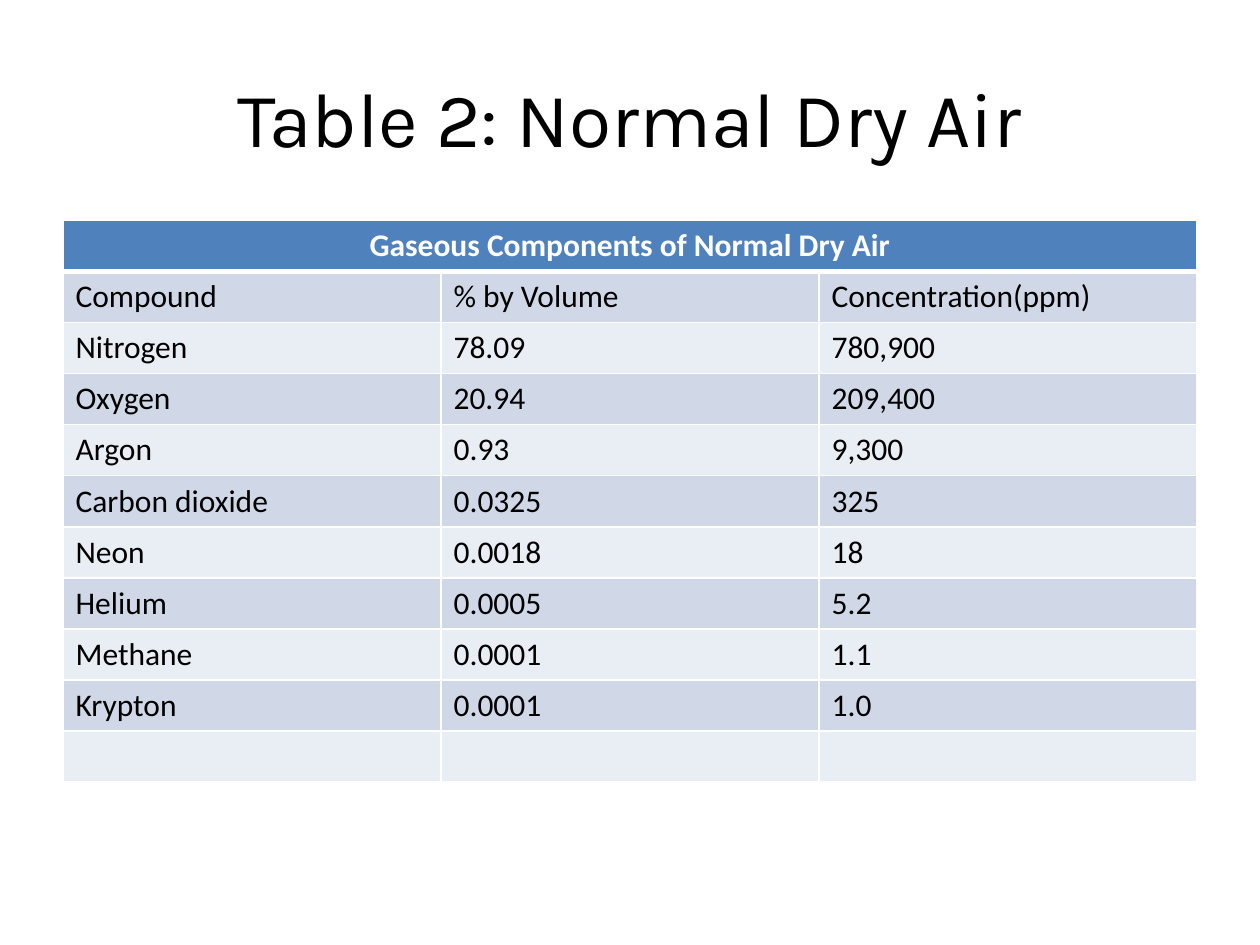
from dataclasses import dataclass

from lxml import etree
from pptx import Presentation
from pptx.dml.color import RGBColor
from pptx.enum.text import MSO_ANCHOR, PP_ALIGN
from pptx.oxml.ns import qn
from pptx.util import Inches, Pt

LEFT, CENTER = PP_ALIGN.LEFT, PP_ALIGN.CENTER
MIDDLE = MSO_ANCHOR.MIDDLE

HEADING = "Gaseous Components of Normal Dry Air"
GASES = [
    ("Compound", "% by Volume", "Concentration(ppm)"),
    ("Nitrogen", "78.09", "780,900"),
    ("Oxygen", "20.94", "209,400"),
    ("Argon", "0.93", "9,300"),
    ("Carbon dioxide", "0.0325", "325"),
    ("Neon", "0.0018", "18"),
    ("Helium", "0.0005", "5.2"),
    ("Methane", "0.0001", "1.1"),
    ("Krypton", "0.0001", "1.0"),
    ("", "", ""),
]


@dataclass(frozen=True)
class Theme:
    title_font: str = "Karla"
    body_font: str = "Calibri"
    title_size: int = 44
    body_size: int = 18
    ink: str = "000000"
    paper: str = "FFFFFF"
    header: str = "4F81BD"
    bands: tuple = ("D0D8E8", "E9EDF4")
    rule: int = 1
    header_rule: int = 3


def write(frame, text, *, font, size, color, bold=False, align=LEFT):
    para = frame.paragraphs[0]
    para.alignment = align
    para.font.size = Pt(size)
    if text:
        span = para.add_run()
        span.text = text
        span.font.name = font
        span.font.size = Pt(size)
        span.font.bold = bold
        span.font.color.rgb = RGBColor.from_string(color)


def set_borders(cell, color, **widths):
    """Draw solid cell borders; widths in points are keyed L, R, T, B."""
    properties = cell._tc.get_or_add_tcPr()
    for side, width in widths.items():
        line = etree.SubElement(properties, qn(f"a:ln{side}"), w=str(Pt(width)))
        fill = etree.SubElement(line, qn("a:solidFill"))
        etree.SubElement(fill, qn("a:srgbClr"), val=color)


class SlideBuilder:
    def __init__(self, page, theme):
        self.page = page
        self.theme = theme

    def title(self, text, left, top, width, height):
        box = self.page.shapes.add_textbox(
            Inches(left), Inches(top), Inches(width), Inches(height))
        frame = box.text_frame
        frame.word_wrap = True
        frame.vertical_anchor = MIDDLE
        write(frame, text, font=self.theme.title_font,
              size=self.theme.title_size, color=self.theme.ink, align=CENTER)

    def style_cell(self, cell, fill, top, bottom):
        rule = self.theme.rule
        set_borders(cell, self.theme.paper, L=rule, R=rule, T=top, B=bottom)
        cell.fill.solid()
        cell.fill.fore_color.rgb = RGBColor.from_string(fill)

    def table(self, heading, rows, left, top, width, height):
        theme = self.theme
        table = self.page.shapes.add_table(
            len(rows) + 1, len(rows[0]), Inches(left), Inches(top),
            Inches(width), Inches(height)).table

        for cell in table.rows[0].cells:
            self.style_cell(cell, theme.header, theme.rule, theme.header_rule)
        header = table.cell(0, 0)
        header.merge(table.cell(0, len(rows[0]) - 1))
        write(header.text_frame, heading, font=theme.body_font,
              size=theme.body_size, color=theme.paper, bold=True, align=CENTER)

        for index, row in enumerate(rows):
            fill = theme.bands[index % len(theme.bands)]
            top_rule = theme.rule if index else theme.header_rule
            for cell, text in zip(table.rows[index + 1].cells, row):
                self.style_cell(cell, fill, top_rule, theme.rule)
                write(cell.text_frame, text, font=theme.body_font,
                      size=theme.body_size, color=theme.ink)


def main():
    deck = Presentation()
    deck.slide_width, deck.slide_height = Inches(10), Inches(7.5)
    page = deck.slides.add_slide(deck.slide_layouts[6])
    builder = SlideBuilder(page, Theme())
    builder.title("Table 2: Normal Dry Air", 0.5, 0.3, 9, 1.25)
    builder.table(HEADING, GASES, 0.5, 1.75, 9, 4.46)
    deck.save("out.pptx")


if __name__ == "__main__":
    main()
